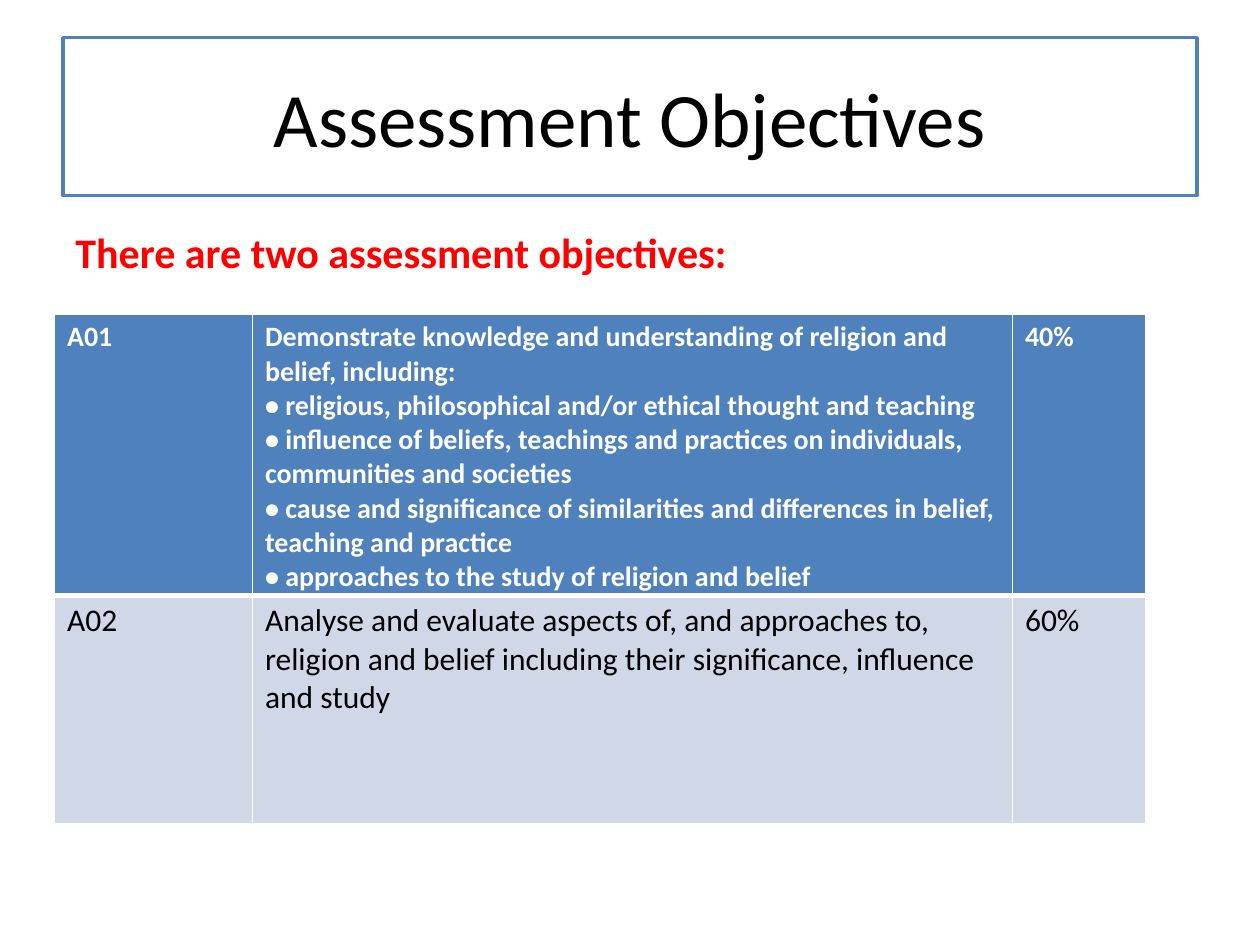
from lxml import etree
from pptx import Presentation
from pptx.dml.color import RGBColor
from pptx.enum.shapes import MSO_SHAPE
from pptx.enum.text import MSO_ANCHOR, PP_ALIGN
from pptx.oxml.ns import qn
from pptx.util import Cm, Pt

RECTANGLE = MSO_SHAPE.RECTANGLE
MIDDLE, TOP = MSO_ANCHOR.MIDDLE, MSO_ANCHOR.TOP
CENTER, LEFT = PP_ALIGN.CENTER, PP_ALIGN.LEFT

COLORS = {
    "white": "FFFFFF",
    "black": "000000",
    "red": "FF0000",
    "blue": "4F81BD",
    "pale": "D0D8E8",
}


def write_text(text_frame, lines, size, color, bold=False, align=LEFT, anchor=TOP):
    text_frame.word_wrap = True
    text_frame.vertical_anchor = anchor
    text_frame.text = "\n".join(lines)
    font_format = {"name": "Calibri", "size": Pt(size), "bold": bold}
    for paragraph in text_frame.paragraphs:
        paragraph.alignment = align
        font = paragraph.runs[0].font
        for attribute, value in font_format.items():
            setattr(font, attribute, value)
        font.color.rgb = RGBColor.from_string(COLORS[color])


def add_border(cell, side, width):
    properties = cell._tc.get_or_add_tcPr()
    line = etree.SubElement(properties, qn(f"a:ln{side}"), w=str(Pt(width)))
    fill = etree.SubElement(line, qn("a:solidFill"))
    etree.SubElement(fill, qn("a:srgbClr"), val=COLORS["white"])


presentation = Presentation()
presentation.slide_width = Cm(25.4)
presentation.slide_height = Cm(19.05)
slide = presentation.slides.add_slide(presentation.slide_layouts[6])

title = slide.shapes.add_shape(RECTANGLE, Cm(1.27), Cm(0.76), Cm(22.86), Cm(3.18))
title.shadow.inherit = False
title.fill.solid()
title.fill.fore_color.rgb = RGBColor.from_string(COLORS["white"])
title.line.color.rgb = RGBColor.from_string(COLORS["blue"])
title.line.width = Pt(2)
write_text(title.text_frame, ["Assessment Objectives"], 44, "black", align=CENTER, anchor=MIDDLE)

introduction = slide.shapes.add_textbox(Cm(1.27), Cm(4.45), Cm(22.02), Cm(0.69))
write_text(introduction.text_frame, ["There are two assessment objectives:"], 24, "red", bold=True)

objectives = [
    (["A01"], [
        "Demonstrate knowledge and understanding of religion and belief, including:",
        "• religious, philosophical and/or ethical thought and teaching",
        "• influence of beliefs, teachings and practices on individuals, communities and societies",
        "• cause and significance of similarities and differences in belief, teaching and practice",
        "• approaches to the study of religion and belief",
    ], ["40%"]),
    (["A02"], [
        "Analyse and evaluate aspects of, and approaches to, religion and belief "
        "including their significance, influence and study",
    ], ["60%"]),
]
column_widths = [3.99, 15.32, 2.69]
row_heights = [5, 4.6]
row_styles = [
    {"fill": "blue", "text": {"size": 16, "color": "white", "bold": True},
     "borders": {"L": 1, "R": 1, "T": 1, "B": 3}},
    {"fill": "pale", "text": {"size": 18, "color": "black"},
     "borders": {"L": 1, "R": 1, "T": 3, "B": 1}},
]

table = slide.shapes.add_table(
    len(row_heights), len(column_widths), Cm(1.1), Cm(6.33),
    Cm(sum(column_widths)), Cm(sum(row_heights)),
).table
for column, width in zip(table.columns, column_widths):
    column.width = Cm(width)
for row, height, objective, style in zip(table.rows, row_heights, objectives, row_styles):
    row.height = Cm(height)
    for cell, lines in zip(row.cells, objective):
        write_text(cell.text_frame, lines, **style["text"])
        for side, width in style["borders"].items():
            add_border(cell, side, width)
        cell.fill.solid()
        cell.fill.fore_color.rgb = RGBColor.from_string(COLORS[style["fill"]])

presentation.save("out.pptx")
